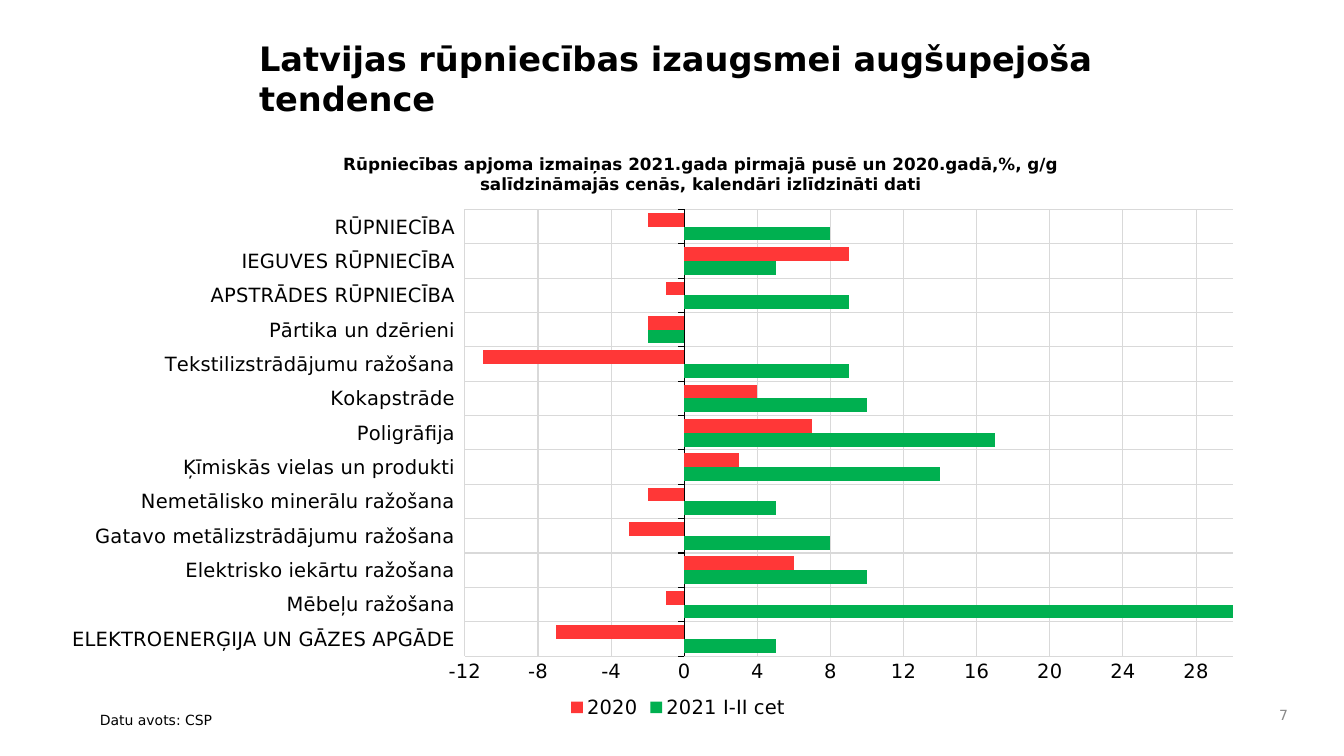
from lxml import etree
from pptx import Presentation, util as u
from pptx.chart.data import CategoryChartData
from pptx.dml.color import RGBColor
from pptx.enum import chart as ch, text as tx
from pptx.oxml import parse_xml
from pptx.oxml.ns import nsdecls

BLACK = RGBColor(0x00, 0x00, 0x00)
GREY = RGBColor(0x89, 0x89, 0x89)
GRID = RGBColor(0xD9, 0xD9, 0xD9)
GREEN = RGBColor(0x00, 0xB0, 0x50)
RED = RGBColor(0xFF, 0x37, 0x37)
FONT = "DejaVu Sans"


def px(*nums):
    return [u.Emu(round(n * 914400 / 100.8)) for n in nums]


def write(box, lines, size, color=BLACK, bold=False, align=tx.PP_ALIGN.LEFT):
    frame = box.text_frame
    frame.word_wrap = True
    for i, line in enumerate(lines):
        para = frame.add_paragraph() if i else frame.paragraphs[0]
        para.alignment = align
        run = para.add_run()
        run.text = line
        font = run.font
        font.name, font.size, font.bold = FONT, u.Pt(size), bold
        font.color.rgb = color
    return frame


deck = Presentation()
deck.slide_width, deck.slide_height = px(1344, 756)
slide = deck.slides.add_slide(deck.slide_layouts[5])
items = slide.shapes

# Title
title = items.title
title.left, title.top, title.width, title.height = px(249, 33, 1002, 114)
frame = write(title, ["Latvijas rūpniecības izaugsmei augšupejoša tendence"], 24, bold=True)
frame.vertical_anchor = tx.MSO_ANCHOR.TOP
frame.auto_size = tx.MSO_AUTO_SIZE.NONE

# Chart heading, source note and page number
write(items.add_textbox(*px(115, 149, 1172, 50)),
      ["Rūpniecības apjoma izmaiņas 2021.gada pirmajā pusē un 2020.gadā,%, g/g",
       "salīdzināmajās cenās, kalendāri izlīdzināti dati"],
      12, bold=True, align=tx.PP_ALIGN.CENTER)
write(items.add_textbox(*px(90, 707, 291, 33)), ["Datu avots: CSP"], 10)
page = write(items.add_textbox(*px(1237, 698, 61, 33)), ["7"], 10, GREY,
             align=tx.PP_ALIGN.RIGHT)
page.vertical_anchor = tx.MSO_ANCHOR.MIDDLE

# Chart data, from bottom to top: name, 2021, 2020
rows = [
    ("ELEKTROENERĢIJA UN GĀZES APGĀDE", 5, -7),
    ("Mēbeļu ražošana", 30, -1),
    ("Elektrisko iekārtu ražošana", 10, 6),
    ("Gatavo metālizstrādājumu ražošana", 8, -3),
    ("Nemetālisko minerālu ražošana", 5, -2),
    ("Ķīmiskās vielas un produkti", 14, 3),
    ("Poligrāfija", 17, 7),
    ("Kokapstrāde", 10, 4),
    ("Tekstilizstrādājumu ražošana", 9, -11),
    ("Pārtika un dzērieni", -2, -2),
    ("APSTRĀDES RŪPNIECĪBA", 9, -1),
    ("IEGUVES RŪPNIECĪBA", 5, 9),
    ("RŪPNIECĪBA", 8, -2),
]
names, new, old = zip(*rows)
data = CategoryChartData(number_format="0")
data.categories = names
data.add_series("2021 I-II cet", new)
data.add_series("2020", old)
chart = items.add_chart(ch.XL_CHART_TYPE.BAR_CLUSTERED,
                        *px(72, 209, 1205, 514), data).chart
chart.has_title = False
chart.font.name, chart.font.size = FONT, u.Pt(14)
chart.font.color.rgb = BLACK

# Bars
plot = chart.plots[0]
plot.gap_width, plot.overlap = 50, 0
plot.vary_by_categories = False
for bars, color in zip(plot.series, (GREEN, RED)):
    bars.invert_if_negative = False
    bars.format.fill.solid()
    bars.format.fill.fore_color.rgb = color

# Axes
cats, vals = chart.category_axis, chart.value_axis
for axis in (cats, vals):
    axis.has_major_gridlines = True
    line = axis.major_gridlines.format.line
    line.color.rgb, line.width = GRID, u.Pt(0.75)
    axis.minor_tick_mark = ch.XL_TICK_MARK.NONE
cats.major_tick_mark = ch.XL_TICK_MARK.OUTSIDE
cats.tick_label_position = ch.XL_TICK_LABEL_POSITION.LOW
cats.format.line.color.rgb = BLACK
cats.format.line.width = u.Pt(0.75)
vals.major_tick_mark = ch.XL_TICK_MARK.NONE
vals.format.line.fill.background()
vals.minimum_scale, vals.maximum_scale, vals.major_unit = -12, 30, 4
vals.tick_labels.number_format = "0"
vals.tick_labels.number_format_is_linked = False

# Legend
chart.has_legend = True
chart.legend.position = ch.XL_LEGEND_POSITION.BOTTOM
chart.legend.include_in_layout = False

# Fixed inner plot area
area = plot._element.getparent()
for gap in area.findall("{*}layout"):
    area.remove(gap)
layout = parse_xml(f"<c:layout {nsdecls('c')}><c:manualLayout/></c:layout>")
for tag, val in (("layoutTarget", "inner"), ("xMode", "edge"), ("yMode", "edge"),
                 ("x", "0.32"), ("y", "0"), ("w", "0.64"), ("h", "0.87")):
    etree.SubElement(layout[0], etree.QName(layout.nsmap["c"], tag)).set("val", val)
for node in layout[0]:
    if node.tag.endswith("}x"):
        node.set("val", "0.322")
    elif node.tag.endswith("}w"):
        node.set("val", "0.641")
area.insert(0, layout)

deck.save("out.pptx")
